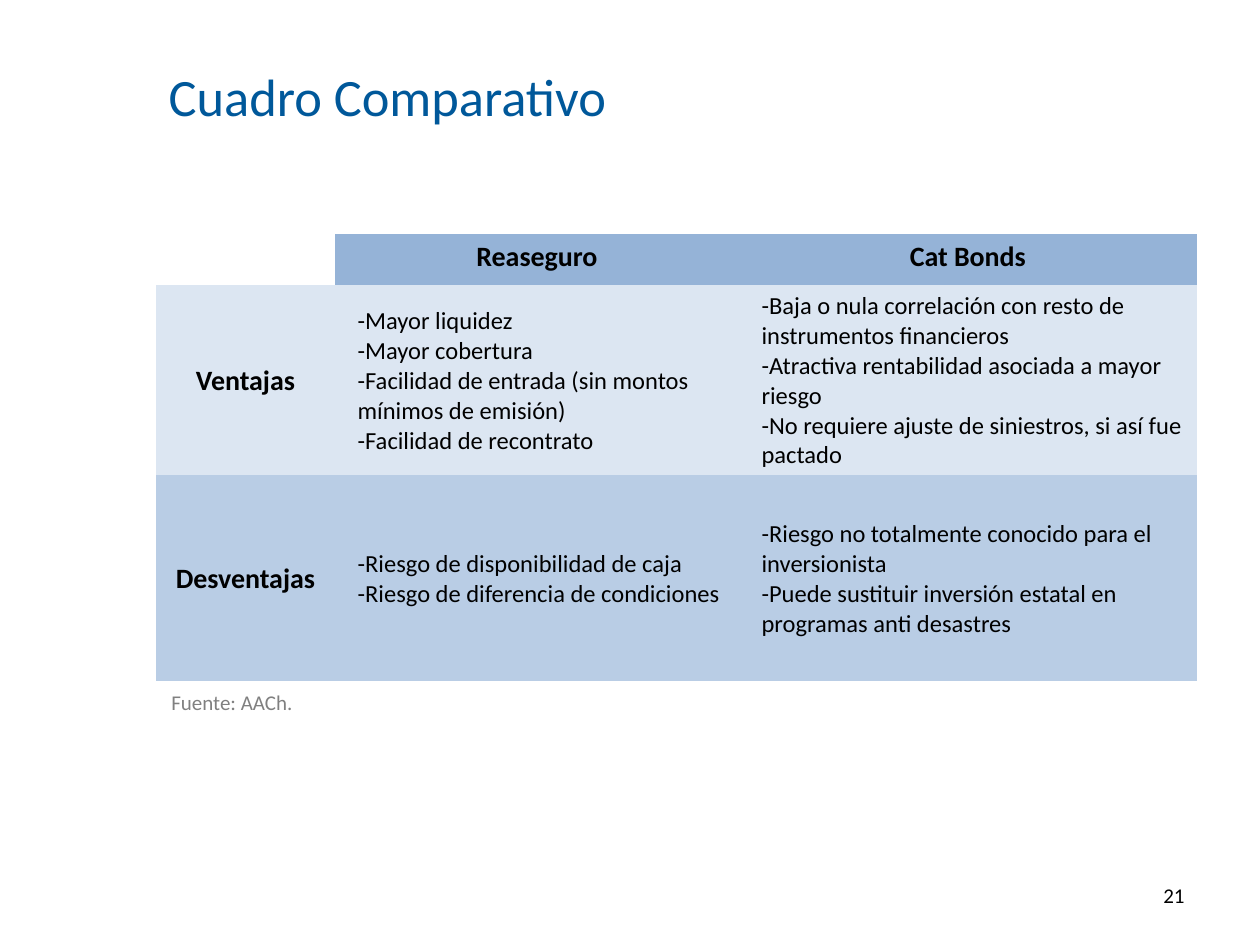
"""Build a slide with a table comparing reinsurance and cat bonds."""
from pptx import Presentation
from pptx.dml.color import RGBColor
from pptx.enum.text import MSO_ANCHOR, PP_ALIGN
from pptx.oxml.ns import qn
from pptx.util import Pt

PX = 914400 // 126
BLACK = RGBColor(0, 0, 0)
NAVY = RGBColor(0x00, 0x58, 0x9A)
GREY = RGBColor(0x80, 0x80, 0x80)
HEAD = RGBColor(0x95, 0xB3, 0xD7)
PALE = RGBColor(0xDC, 0xE6, 0xF2)
MID = RGBColor(0xB9, 0xCD, 0xE5)
NO_STYLE = "{2D5ABB26-0587-4C30-8999-92F81FD0307C}"


def write(frame, lines, size, color, align, bold=False):
    frame.word_wrap = True
    frame.text = "\n".join(lines)
    for para in frame.paragraphs:
        para.alignment = align
        font = para.font
        font.name, font.size, font.bold = "Calibri", Pt(size), bold
        font.color.rgb = color


def place(shape, left, top, width, height):
    shape.left, shape.top = left * PX, top * PX
    shape.width, shape.height = width * PX, height * PX


deck = Presentation()
deck.slide_width, deck.slide_height = 1260 * PX, 945 * PX
slide = deck.slides.add_slide(deck.slide_layouts[5])

title = slide.shapes.title
place(title, 156, 55, 1042, 61)
write(title.text_frame, ["Cuadro Comparativo"], 30, NAVY, PP_ALIGN.LEFT)
title.text_frame.vertical_anchor = MSO_ANCHOR.TOP
title.text_frame.margin_top = 9 * PX

rows = [
    (51, HEAD, [[], ["Reaseguro"], ["Cat Bonds"]]),
    (190, PALE, [
        ["Ventajas"],
        ["-Mayor liquidez", "-Mayor cobertura",
         "-Facilidad de entrada (sin montos mínimos de emisión)",
         "-Facilidad de recontrato"],
        ["-Baja o nula correlación con resto de instrumentos financieros",
         "-Atractiva rentabilidad asociada a mayor riesgo",
         "-No requiere ajuste de siniestros, si así fue pactado"]]),
    (206, MID, [
        ["Desventajas"],
        ["-Riesgo de disponibilidad de caja",
         "-Riesgo de diferencia de condiciones"],
        ["-Riesgo no totalmente conocido para el inversionista",
         "-Puede sustituir inversión estatal en programas anti desastres"]]),
]
widths = [179, 404, 458]
high = sum(row[0] for row in rows)
table = slide.shapes.add_table(
    len(rows), len(widths), 156 * PX, 234 * PX, sum(widths) * PX, high * PX
).table
table.first_row = table.horz_banding = False
table._tbl.tblPr.find(qn("a:tableStyleId")).text = NO_STYLE
for col, width in zip(table.columns, widths):
    col.width = width * PX

for r, (height, fill, texts) in enumerate(rows):
    table.rows[r].height = height * PX
    for c, lines in enumerate(texts):
        cell = table.cell(r, c)
        cell.margin_top, cell.margin_bottom = 6 * PX, 4 * PX
        if not lines:
            cell.fill.background()
            continue
        cell.fill.solid()
        cell.fill.fore_color.rgb = fill
        label = r == 0 or c == 0
        align = PP_ALIGN.CENTER if label else PP_ALIGN.LEFT
        write(cell.text_frame, lines, 16 if label else 14, BLACK, align, label)
        if r:
            cell.vertical_anchor = MSO_ANCHOR.MIDDLE
        if not label:
            for para in cell.text_frame.paragraphs:
                props = para._p.get_or_add_pPr()
                props.set("marL", str(10 * PX))
                props.set("indent", "0")

notes = [
    ("Fuente: AACh.", (159, 683, 794, 55), GREY, PP_ALIGN.LEFT),
    ("21", (903, 876, 294, 50), BLACK, PP_ALIGN.RIGHT),
]
for text, area, color, align in notes:
    box = slide.shapes.add_textbox(0, 0, PX, PX)
    place(box, *area)
    write(box.text_frame, [text], 12, color, align)

deck.save("out.pptx")
